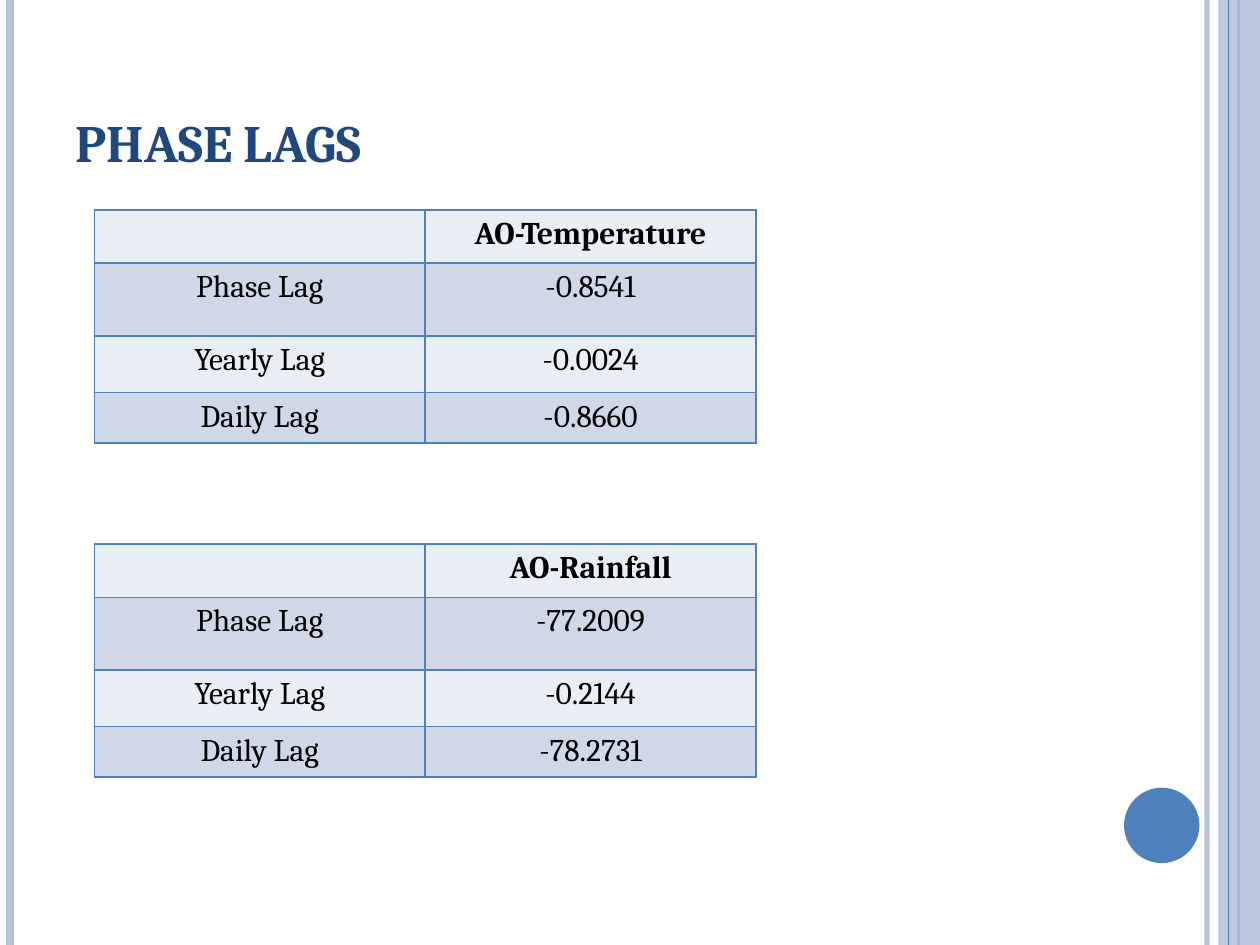
from lxml import etree
from pptx import Presentation
from pptx.dml.color import RGBColor
from pptx.enum.shapes import MSO_CONNECTOR, MSO_SHAPE
from pptx.enum.text import MSO_ANCHOR, PP_ALIGN
from pptx.oxml.ns import qn
from pptx.util import Cm, Pt

STRAIGHT = MSO_CONNECTOR.STRAIGHT
RECTANGLE, OVAL = MSO_SHAPE.RECTANGLE, MSO_SHAPE.OVAL
BOTTOM, CENTER = MSO_ANCHOR.BOTTOM, PP_ALIGN.CENTER

FONT = "Cambria"
COLORS = {
    "title": "1F497D",
    "text": "000000",
    "accent": "4F81BD",
    "pale": "B3C1DB",
    "light_row": "E9EDF4",
    "dark_row": "D0D8E8",
}
TITLE = "PHASE LAGS"
ROW_LABELS = ["", "Phase Lag", "Yearly Lag", "Daily Lag"]
# table top in cm, then the value column with its heading
TABLES = [
    (4.23, ["AO-Temperature", "-0.8541", "-0.0024", "-0.8660"]),
    (10.97, ["AO-Rainfall", "-77.2009", "-0.2144", "-78.2731"]),
]
ROW_HEIGHTS = [1.07, 1.47, 1.14, 0.94]
TABLE_LEFT, COLUMN_WIDTH = 1.9, 6.67
SLIDE_WIDTH, SLIDE_HEIGHT = 25.4, 19.05
BAND_LEFT = 24.56

# x in cm, colour, width in points, opacity in percent
LINES_BEHIND_BAND = [
    (24.33, "pale", 3, 93),
    (0.21, "pale", 4.5, 100),
    (24.97, "accent", 1.5, 100),
]
LINE_ON_BAND = (24.76, "accent", 0.75, 100)


def rgb(name):
    return RGBColor.from_string(COLORS[name])


def set_opacity(element, percent):
    color = next(element.iter(qn("a:srgbClr")))
    etree.SubElement(color, qn("a:alpha"), val=str(percent * 1000))


def add_vertical_line(slide, x, color, width, opacity):
    line = slide.shapes.add_connector(STRAIGHT, Cm(x), 0, Cm(x), Cm(SLIDE_HEIGHT))
    line.line.color.rgb = rgb(color)
    line.line.width = Pt(width)
    properties = line._element.spPr
    if opacity < 100:
        set_opacity(properties, opacity)
    etree.SubElement(properties, qn("a:effectLst"))


def add_plain_shape(slide, kind, left, top, width, height, color):
    shape = slide.shapes.add_shape(kind, Cm(left), Cm(top), Cm(width), Cm(height))
    shape.shadow.inherit = False
    shape.fill.solid()
    shape.fill.fore_color.rgb = rgb(color)
    shape.line.fill.background()
    return shape


def format_runs(paragraph, size, color, bold):
    for run in paragraph.runs:
        run.font.name = FONT
        run.font.size = Pt(size)
        run.font.bold = bold
        run.font.color.rgb = rgb(color)


def add_title(slide):
    box = slide.shapes.add_textbox(Cm(1.27), Cm(0.43), Cm(20.75), Cm(3.18))
    frame = box.text_frame
    frame.word_wrap = True
    frame.vertical_anchor = BOTTOM
    frame.text = TITLE
    format_runs(frame.paragraphs[0], 30, "title", True)


def set_cell_borders(cell):
    properties = cell._tc.get_or_add_tcPr()
    for position, side in enumerate(("a:lnL", "a:lnR", "a:lnT", "a:lnB")):
        border = etree.Element(qn(side), w=str(Pt(1)))
        fill = etree.SubElement(border, qn("a:solidFill"))
        etree.SubElement(fill, qn("a:srgbClr"), val=COLORS["accent"])
        properties.insert(position, border)


def add_lag_table(slide, top, values):
    rows = list(zip(ROW_LABELS, values))
    table = slide.shapes.add_table(
        len(rows), 2, Cm(TABLE_LEFT), Cm(top), Cm(2 * COLUMN_WIDTH), Cm(sum(ROW_HEIGHTS))
    ).table
    for column in table.columns:
        column.width = Cm(COLUMN_WIDTH)
    for row_index, texts in enumerate(rows):
        table.rows[row_index].height = Cm(ROW_HEIGHTS[row_index])
        for column_index, text in enumerate(texts):
            cell = table.cell(row_index, column_index)
            cell.fill.solid()
            cell.fill.fore_color.rgb = rgb("dark_row" if row_index % 2 else "light_row")
            set_cell_borders(cell)
            if text:
                cell.text_frame.text = text
                paragraph = cell.text_frame.paragraphs[0]
                paragraph.alignment = CENTER
                format_runs(paragraph, 18, "text", row_index == 0)


def main():
    presentation = Presentation()
    presentation.slide_width = Cm(SLIDE_WIDTH)
    presentation.slide_height = Cm(SLIDE_HEIGHT)
    slide = presentation.slides.add_slide(presentation.slide_layouts[6])

    for line in LINES_BEHIND_BAND:
        add_vertical_line(slide, *line)
    band = add_plain_shape(
        slide, RECTANGLE, BAND_LEFT, 0, SLIDE_WIDTH - BAND_LEFT, SLIDE_HEIGHT, "pale"
    )
    set_opacity(band._element.spPr, 87)
    add_vertical_line(slide, *LINE_ON_BAND)
    add_plain_shape(slide, OVAL, 22.66, 15.88, 1.52, 1.52, "accent")

    add_title(slide)
    for top, values in TABLES:
        add_lag_table(slide, top, values)
    presentation.save("out.pptx")


if __name__ == "__main__":
    main()
